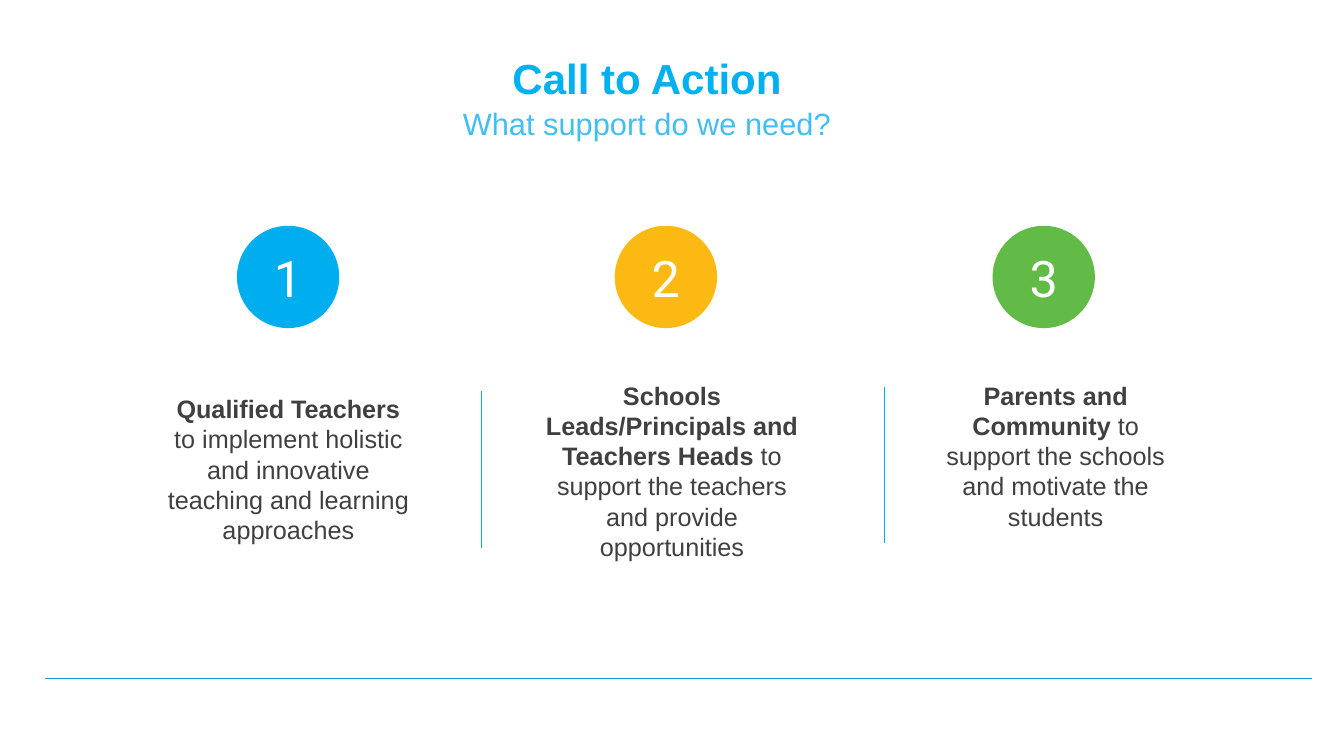
from dataclasses import dataclass

from lxml import etree
from pptx import Presentation
from pptx.dml.color import RGBColor
from pptx.enum.shapes import MSO_CONNECTOR, MSO_SHAPE
from pptx.enum.text import MSO_ANCHOR, MSO_AUTO_SIZE, PP_ALIGN
from pptx.oxml.ns import qn
from pptx.util import Inches, Pt

OVAL = MSO_SHAPE.OVAL
STRAIGHT = MSO_CONNECTOR.STRAIGHT
TOP, MIDDLE = MSO_ANCHOR.TOP, MSO_ANCHOR.MIDDLE
CENTER = PP_ALIGN.CENTER
NO_AUTOFIT = MSO_AUTO_SIZE.NONE
TITLE_ONLY = 5
WIDTH, HEIGHT = Inches(26.66), Inches(15)


@dataclass(frozen=True)
class Theme:
    title: str = "00B0F0"
    subtitle: str = "42BEF3"
    body: str = "404040"
    number: str = "FFFFFF"
    divider: str = "00AEEF"
    footer: str = "079AD4"
    badges: tuple = ("00AEEF", "FDB913", "62BB46")
    text_font: str = "Arial"
    number_font: str = "Roboto"
    title_size: int = 60
    subtitle_size: int = 44
    body_size: int = 36
    number_size: int = 72


THEME = Theme()

# Boxes are left, top, width, height in percent of the slide.
TITLE_BOX = (25.21, 7.07, 45.87, 8.07)
SUBTITLE_BOX = (20.67, 14.13, 54.95, 6.33)
FOOTER_BOX = (3.38, 89.67, 94.26, 0)
DIVIDER_BOXES = ((35.82, 51.73, 0, 20.73), (65.83, 51.13, 0, 20.73))
BADGE_LEFT, BADGE_TOP, BADGE_STEP = 17.63, 29.87, 28.11
BADGE_SIZE = Inches(2.03)

# Text box, bold lead and plain remainder of each request.
REQUESTS = (
    ((11.74, 51.73, 19.43, 20.87), "Qualified Teachers ",
     "to implement holistic and innovative teaching and learning approaches"),
    ((39.57, 49.93, 20.86, 24.93), "Schools Leads/Principals and Teachers Heads ",
     "to support the teachers and provide opportunities"),
    ((68.83, 49.93, 19.43, 20.87), "Parents and Community ",
     "to support the schools and motivate the students"),
)


def scale(box):
    """Turn percent of the slide into lengths."""
    return [int(share * side / 100) for share, side in zip(box, (WIDTH, HEIGHT) * 2)]


def prepare_frame(frame, anchor=TOP, wide_margins=False):
    frame.word_wrap = True
    frame.auto_size = NO_AUTOFIT
    frame.vertical_anchor = anchor
    if wide_margins:
        frame.margin_left = frame.margin_right = Inches(0.2)
        frame.margin_top = frame.margin_bottom = Inches(0.1)


def style_paragraph(para, size, color, font=THEME.text_font, bold=None):
    para.alignment = CENTER
    para.font.name = font
    para.font.size = Pt(size)
    para.font.bold = bold
    para.font.color.rgb = RGBColor.from_string(color)


def add_rule(page, box, color, weight):
    left, top, width, height = scale(box)
    rule = page.shapes.add_connector(STRAIGHT, left, top, left + width, top + height)
    rule.line.color.rgb = RGBColor.from_string(color)
    rule.line.width = Pt(weight)
    etree.SubElement(rule.line._get_or_add_ln().getparent(), qn("a:effectLst"))


def add_heading(page, title_box, subtitle_box):
    title = page.shapes.title
    title.left, title.top, title.width, title.height = scale(title_box)
    subtitle = page.shapes.add_textbox(*scale(subtitle_box))
    prepare_frame(title.text_frame, wide_margins=True)
    prepare_frame(subtitle.text_frame)
    lines = (
        (title, "Call to Action", THEME.title_size, THEME.title, True, 20),
        (subtitle, "What support do we need?", THEME.subtitle_size, THEME.subtitle, False, 12),
    )
    for shape, text, size, color, bold, space in lines:
        para = shape.text_frame.paragraphs[0]
        para.text = text
        style_paragraph(para, size, color, bold=bold)
        para.line_spacing = 0.9
        para.space_before = Pt(space)


def add_badge(page, index):
    left, top = scale((BADGE_LEFT + index * BADGE_STEP, BADGE_TOP))
    badge = page.shapes.add_shape(OVAL, left, top, BADGE_SIZE, BADGE_SIZE)
    badge.shadow.inherit = False
    badge.fill.solid()
    badge.fill.fore_color.rgb = RGBColor.from_string(THEME.badges[index])
    badge.line.fill.background()
    prepare_frame(badge.text_frame, MIDDLE, wide_margins=True)
    para = badge.text_frame.paragraphs[0]
    para.text = str(index + 1)
    style_paragraph(para, THEME.number_size, THEME.number, THEME.number_font)


def add_request(page, box, lead, remainder):
    frame = page.shapes.add_textbox(*scale(box)).text_frame
    prepare_frame(frame)
    para = frame.paragraphs[0]
    style_paragraph(para, THEME.body_size, THEME.body)
    para.space_after = Pt(12)
    for text, bold in ((lead, True), (remainder, False)):
        span = para.add_run()
        span.text = text
        span.font.bold = bold


def main():
    deck = Presentation()
    deck.slide_width, deck.slide_height = WIDTH, HEIGHT
    page = deck.slides.add_slide(deck.slide_layouts[TITLE_ONLY])
    add_heading(page, TITLE_BOX, SUBTITLE_BOX)
    for index, request in enumerate(REQUESTS):
        add_badge(page, index)
        add_request(page, *request)
    for box in DIVIDER_BOXES:
        add_rule(page, box, THEME.divider, 1.75)
    add_rule(page, FOOTER_BOX, THEME.footer, 0.25)
    deck.save("out.pptx")


if __name__ == "__main__":
    main()
